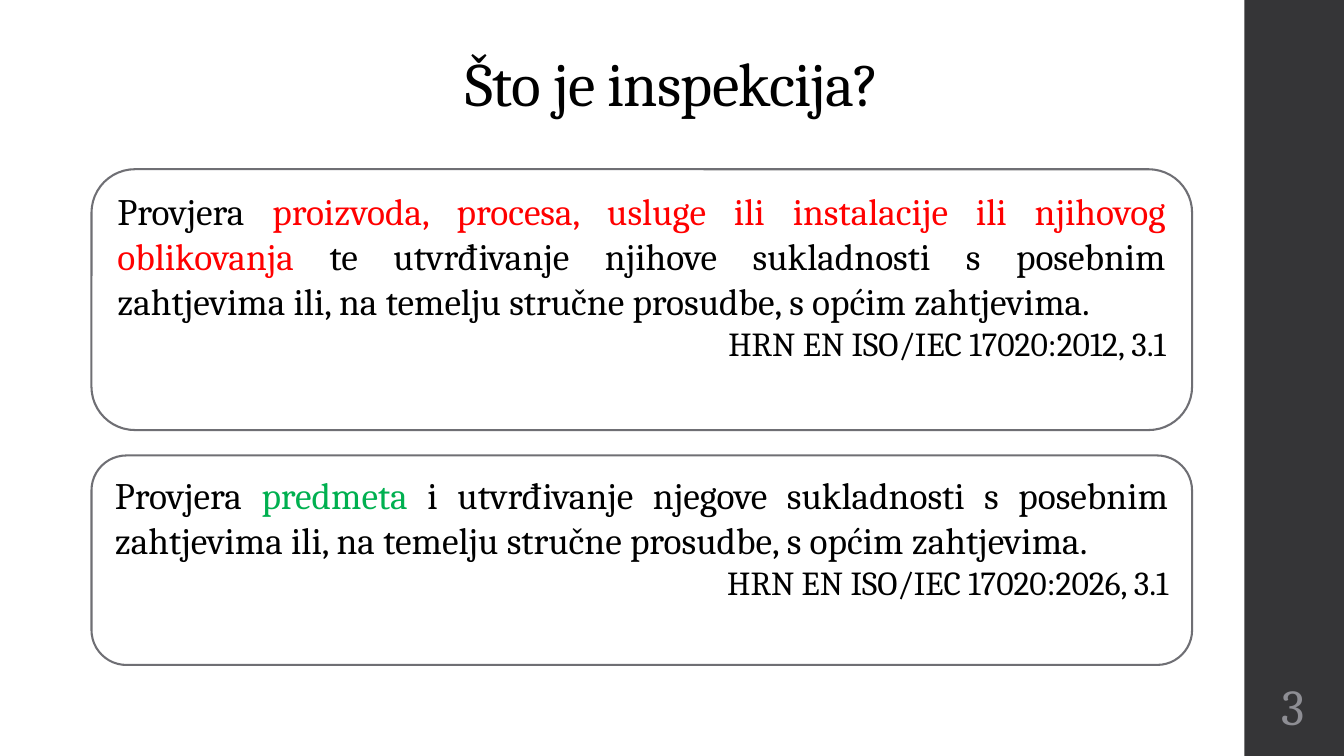
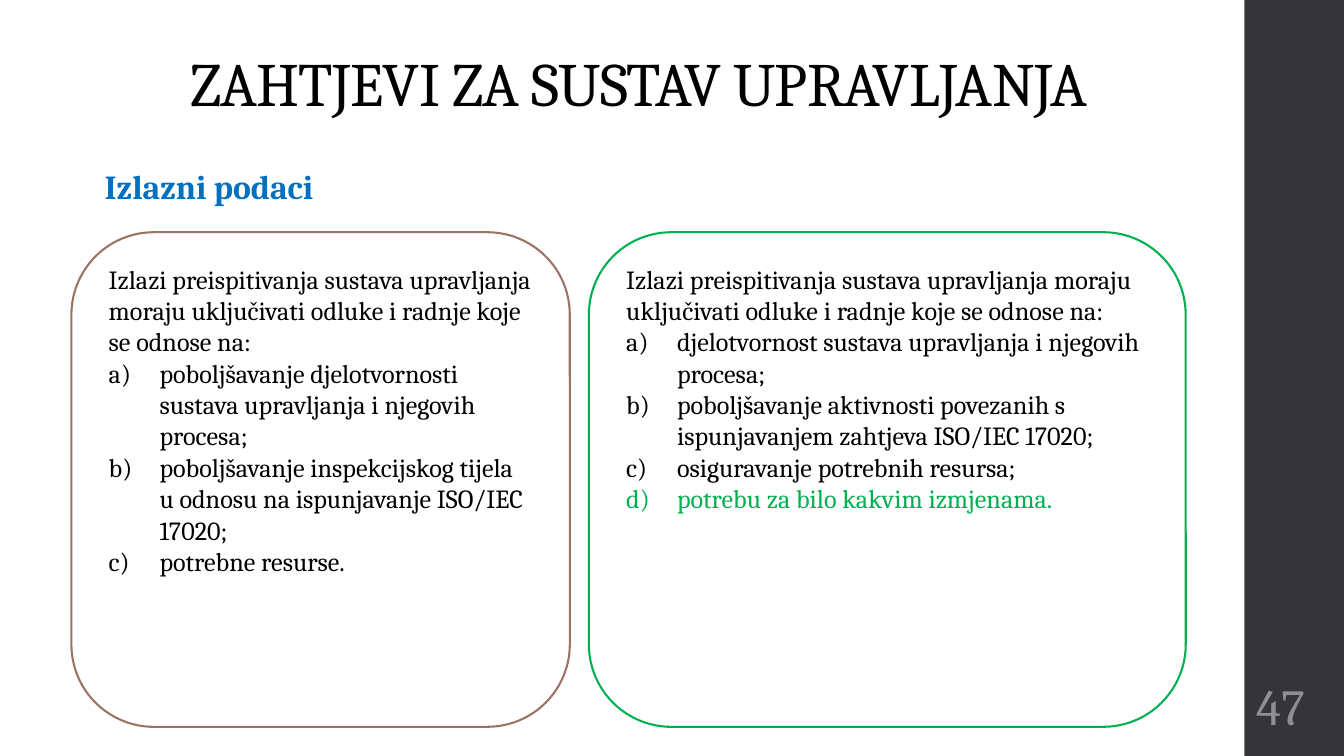
from lxml import etree
from pptx import Presentation
from pptx import util as u
from pptx.dml.color import RGBColor
from pptx.enum import shapes, text
from pptx.oxml import ns

FONT = "Cambria"
BLACK = RGBColor(0x00, 0x00, 0x00)
WHITE = RGBColor(0xFF, 0xFF, 0xFF)
BAND = RGBColor(0x35, 0x35, 0x37)
NUMBER_GREY = RGBColor(0x8E, 0x8E, 0x94)
OUTLINE_GREY = RGBColor(0x6F, 0x6F, 0x74)
BROWN = RGBColor(0x9B, 0x73, 0x62)
RED = RGBColor(0xFF, 0x00, 0x00)
GREEN = RGBColor(0x00, 0xB0, 0x50)
BLUE = RGBColor(0x00, 0x70, 0xC0)

WIDTH, HEIGHT = 25.4, 14.29
BAND_LEFT = 23.52
MARGIN = 1.73
DEFINITION_WIDTH = 20.8
CARD_TOP, CARD_HEIGHT = 4.39, 9.35
LIST_INDENT = u.Cm(0.96)

ALIGN = text.PP_ALIGN
ANCHOR = text.MSO_ANCHOR

OUTPUTS_INTRO = (
    "Izlazi preispitivanja sustava upravljanja moraju uključivati "
    "odluke i radnje koje se odnose na:"
)


def lengths(*values):
    return [u.Cm(value) for value in values]


def format_span(span, size, color, bold=False):
    span.font.name = FONT
    span.font.size = u.Pt(size)
    span.font.color.rgb = color
    span.font.bold = bold


def add_spans(para, spans, size, align):
    para.alignment = align
    for wording, color in spans:
        span = para.add_run()
        span.text = wording
        format_span(span, size, color)


def add_label(page, place, wording, size, color, align, anchor=ANCHOR.TOP,
              bold=False, inset=True):
    frame = page.shapes.add_textbox(*lengths(*place)).text_frame
    frame.word_wrap = True
    frame.vertical_anchor = anchor
    if not inset:
        frame.margin_left = frame.margin_right = 0
        frame.margin_top = frame.margin_bottom = 0
    frame.text = wording
    para = frame.paragraphs[0]
    para.alignment = align
    format_span(para.runs[0], size, color, bold)
    return para


def add_title(page, left, width, wording):
    para = add_label(page, (left, 1.17, width, 1.09), wording, 33, BLACK,
                     ALIGN.CENTER, ANCHOR.BOTTOM, inset=False)
    para.line_spacing = 0.9
    para.runs[0].font._element.set("spc", "-40")


def add_page(deck, number):
    page = deck.slides.add_slide(deck.slide_layouts[6])
    band = page.shapes.add_shape(
        shapes.MSO_SHAPE.RECTANGLE,
        *lengths(BAND_LEFT, 0, WIDTH - BAND_LEFT, HEIGHT))
    band.shadow.inherit = False
    band.fill.solid()
    band.fill.fore_color.rgb = BAND
    band.line.fill.background()
    add_label(page, (23.14, 12.78, 1.52, 1.09), str(number), 27, NUMBER_GREY,
              ALIGN.RIGHT, ANCHOR.MIDDLE, inset=False)
    return page


def add_rounded_box(page, place, outline):
    box = page.shapes.add_shape(
        shapes.MSO_SHAPE.ROUNDED_RECTANGLE, *lengths(*place))
    box.shadow.inherit = False
    box.fill.solid()
    box.fill.fore_color.rgb = WHITE
    box.line.color.rgb = outline
    box.line.width = u.Pt(1.1)
    frame = box.text_frame
    frame.word_wrap = True
    frame.vertical_anchor = ANCHOR.TOP
    return frame


def add_definition(page, top, height, spans, standard):
    frame = add_rounded_box(
        page, (MARGIN, top, DEFINITION_WIDTH, height), OUTLINE_GREY)
    add_spans(frame.paragraphs[0], spans, 20, ALIGN.JUSTIFY)
    add_spans(frame.add_paragraph(), [(standard, BLACK)], 18, ALIGN.RIGHT)


def add_lettering(para):
    properties = para._p.get_or_add_pPr()
    properties.set("marL", str(LIST_INDENT))
    properties.set("indent", str(-LIST_INDENT))
    etree.SubElement(properties, ns.qn("a:buFont"), typeface="+mj-lt")
    etree.SubElement(properties, ns.qn("a:buAutoNum"), type="alphaLcParenR")


def add_outputs_card(page, left, width, outline, items):
    frame = add_rounded_box(
        page, (left, CARD_TOP, width, CARD_HEIGHT), outline)
    add_spans(frame.paragraphs[0], [(OUTPUTS_INTRO, BLACK)], 14, ALIGN.LEFT)
    for item in items:
        para = frame.add_paragraph()
        add_lettering(para)
        add_spans(para, [item], 14, ALIGN.LEFT)


def build_inspection(deck):
    page = add_page(deck, 3)
    add_title(page, 2.9, 19.63, "Što je inspekcija?")
    add_definition(page, 3.2, 4.93, [
        ("Provjera ", BLACK),
        ("proizvoda, procesa, usluge ili instalacije ili njihovog "
         "oblikovanja ", RED),
        ("te utvrđivanje njihove sukladnosti s posebnim zahtjevima ili, "
         "na temelju stručne prosudbe, s općim zahtjevima.", BLACK),
    ], "HRN EN ISO/IEC 17020:2012, 3.1")
    add_definition(page, 8.61, 3.96, [
        ("Provjera ", BLACK),
        ("predmeta ", GREEN),
        ("i utvrđivanje njegove sukladnosti s posebnim zahtjevima ili, "
         "na temelju stručne prosudbe, s općim zahtjevima.", BLACK),
    ], "HRN EN ISO/IEC 17020:2026, 3.1")


def build_outputs(deck):
    page = add_page(deck, 47)
    add_label(page, (MARGIN, 3.02, 19.63, 1.8), "Izlazni podaci", 18, BLUE,
              ALIGN.JUSTIFY, bold=True)
    add_outputs_card(page, 1.35, 9.42, BROWN, [
        ("poboljšavanje djelotvornosti sustava upravljanja i njegovih "
         "procesa;", BLACK),
        ("poboljšavanje inspekcijskog tijela u odnosu na ispunjavanje "
         "ISO/IEC 17020;", BLACK),
        ("potrebne resurse.", BLACK),
    ])
    add_outputs_card(page, 11.13, 11.28, GREEN, [
        ("djelotvornost sustava upravljanja i njegovih procesa;", BLACK),
        ("poboljšavanje aktivnosti povezanih s ispunjavanjem zahtjeva "
         "ISO/IEC 17020;", BLACK),
        ("osiguravanje potrebnih resursa;", BLACK),
        ("potrebu za bilo kakvim izmjenama.", GREEN),
    ])
    add_title(page, 1.04, 22.07, "ZAHTJEVI ZA SUSTAV UPRAVLJANJA")


def main():
    deck = Presentation()
    deck.slide_width, deck.slide_height = lengths(WIDTH, HEIGHT)
    build_inspection(deck)
    build_outputs(deck)
    deck.save("out.pptx")


if __name__ == "__main__":
    main()
